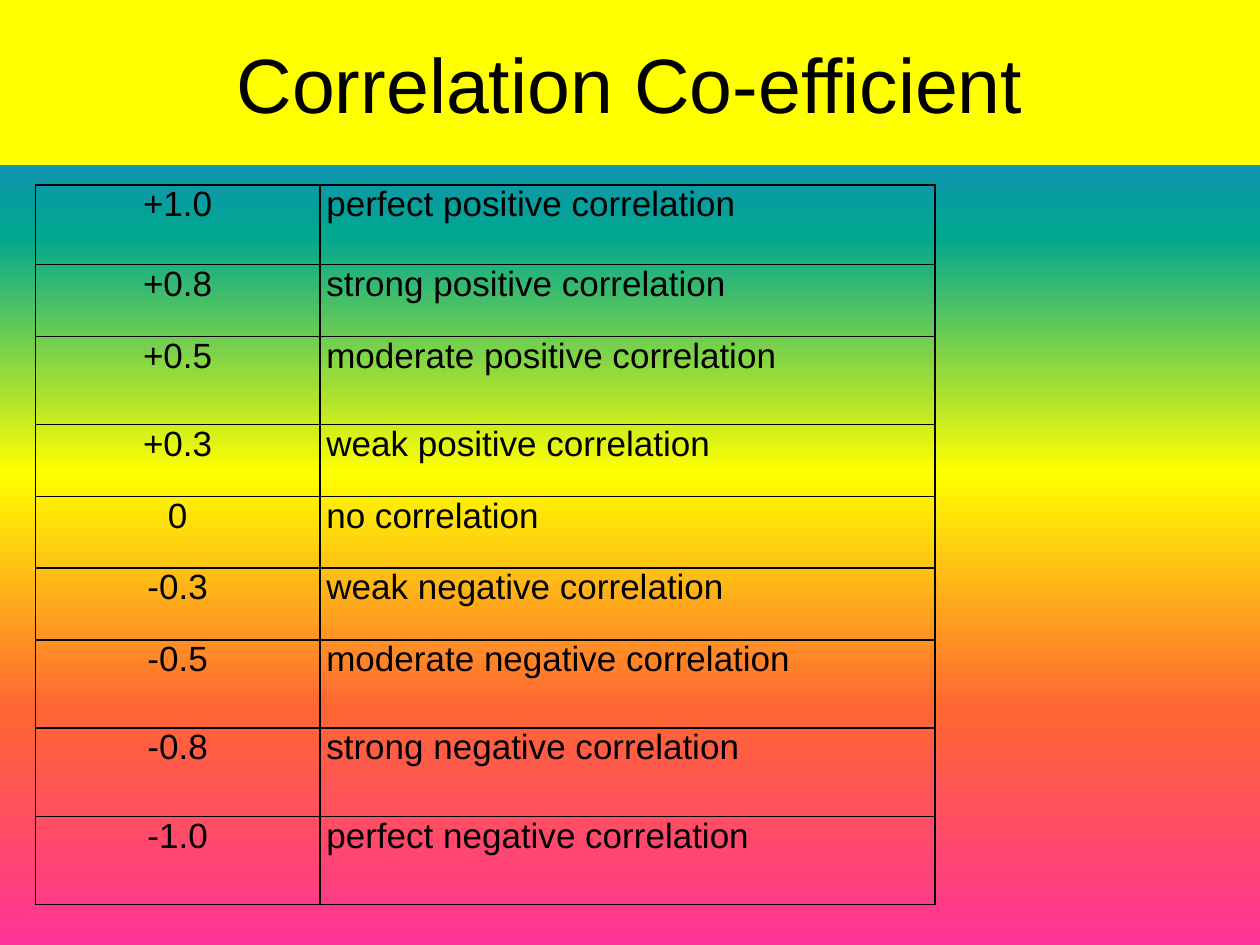
from dataclasses import dataclass

from lxml.etree import SubElement
from pptx import Presentation
from pptx.dml.color import RGBColor
from pptx.enum.text import MSO_ANCHOR, PP_ALIGN
from pptx.oxml import parse_xml
from pptx.oxml.ns import nsdecls, qn
from pptx.util import Inches, Pt


@dataclass(frozen=True)
class Theme:
    font: str = "Arial"
    text: str = "000000"
    title_band: str = "FFFF00"
    border: str = "000000"
    gradient: tuple = ("FF3399", "FF6633", "FFFF00", "01A78F", "3366FF")
    title_size: int = 44
    table_size: int = 20
    border_width: int = 1


theme = Theme()


def format_text(text_frame, size, alignment):
    paragraph = text_frame.paragraphs[0]
    paragraph.alignment = alignment
    font = paragraph.runs[0].font
    font.name = theme.font
    font.size = Pt(size)
    font.color.rgb = RGBColor.from_string(theme.text)


def add_borders(cell):
    properties = cell._tc.get_or_add_tcPr()
    for index, side in enumerate(("lnL", "lnR", "lnT", "lnB")):
        border = parse_xml(
            f'<a:{side} {nsdecls("a")} w="{Pt(theme.border_width)}">'
            f'<a:solidFill><a:srgbClr val="{theme.border}"/></a:solidFill></a:{side}>'
        )
        properties.insert(index, border)


presentation = Presentation()
presentation.slide_width = Inches(10)
presentation.slide_height = Inches(7.5)
slide = presentation.slides.add_slide(presentation.slide_layouts[6])

# Background: evenly spaced gradient stops running from bottom to top
background_fill = slide.background.fill
background_fill.gradient()
background_fill.gradient_angle = 90
stop_list = slide.element.find(".//" + qn("a:gsLst"))
for stop in list(stop_list):
    stop_list.remove(stop)
for index, color in enumerate(theme.gradient):
    position = index * 100000 // (len(theme.gradient) - 1)
    stop = SubElement(stop_list, qn("a:gs"), pos=str(position))
    SubElement(stop, qn("a:srgbClr"), val=color)

# Title band
title = slide.shapes.add_textbox(Inches(0), Inches(0), Inches(10), Inches(1.31))
title.fill.solid()
title.fill.fore_color.rgb = RGBColor.from_string(theme.title_band)
title.text_frame.text = "Correlation Co-efficient"
title.text_frame.word_wrap = True
title.text_frame.vertical_anchor = MSO_ANCHOR.MIDDLE
format_text(title.text_frame, theme.title_size, PP_ALIGN.CENTER)

# Correlation table: coefficient, meaning, row height
correlations = [
    ("+1.0", "perfect positive correlation", 0.63),
    ("+0.8", "strong positive correlation", 0.57),
    ("+0.5", "moderate positive correlation", 0.7),
    ("+0.3", "weak positive correlation", 0.57),
    ("0", "no correlation", 0.57),
    ("-0.3", "weak negative correlation", 0.57),
    ("-0.5", "moderate negative correlation", 0.7),
    ("-0.8", "strong negative correlation", 0.7),
    ("-1.0", "perfect negative correlation", 0.7),
]
column_widths = (2.26, 4.88)
alignments = (PP_ALIGN.CENTER, PP_ALIGN.LEFT)

table = slide.shapes.add_table(
    len(correlations), len(column_widths),
    Inches(0.28), Inches(1.47), Inches(7.14), Inches(5.71),
).table
table.first_row = False
table.horz_banding = False
for column, width in zip(table.columns, column_widths):
    column.width = Inches(width)

for row, (coefficient, meaning, height) in zip(table.rows, correlations):
    row.height = Inches(height)
    for cell, text, alignment in zip(row.cells, (coefficient, meaning), alignments):
        cell.text_frame.text = text
        cell.margin_left = cell.margin_right = Inches(0.05)
        cell.margin_top = cell.margin_bottom = Inches(0)
        cell.vertical_anchor = MSO_ANCHOR.TOP
        cell.fill.background()
        add_borders(cell)
        format_text(cell.text_frame, theme.table_size, alignment)

presentation.save("out.pptx")
